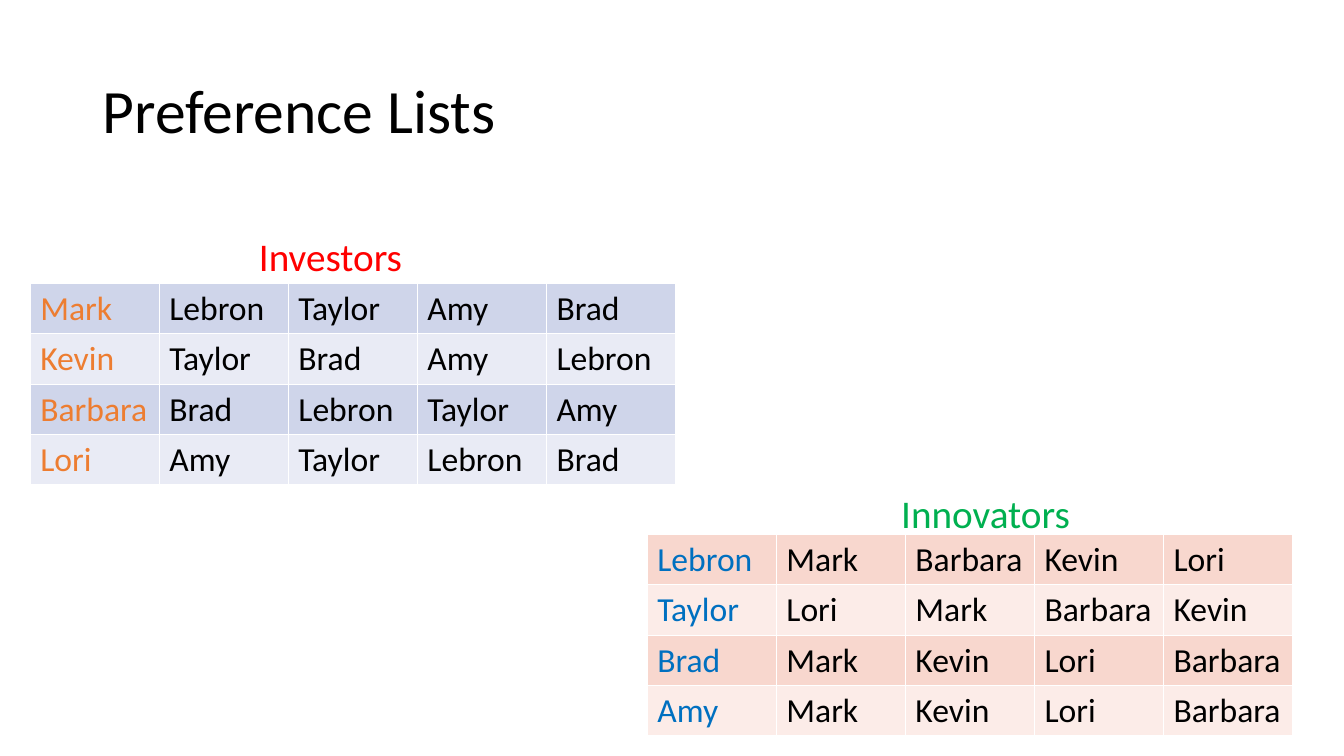
import pptx
import pptx.dml.color
import pptx.enum.text
import pptx.oxml
import pptx.oxml.ns
import pptx.util
from pptx.util import Inches

# Content
FONT = "Calibri"
TITLE = "Preference Lists"
GROUPS = [
    {
        "label": "Investors", "label_color": "FF0000", "label_box": (2.47, 2.26, 1.78, 0.88),
        "table_at": (0.3, 2.81), "name_color": "ED7D31", "bands": ("CFD5EA", "E9EBF5"),
        "preferences": [
            ("Mark", "Lebron", "Taylor", "Amy", "Brad"),
            ("Kevin", "Taylor", "Brad", "Amy", "Lebron"),
            ("Barbara", "Brad", "Lebron", "Taylor", "Amy"),
            ("Lori", "Amy", "Taylor", "Lebron", "Brad"),
        ],
    },
    {
        "label": "Innovators", "label_color": "00B050", "label_box": (8.84, 4.81, 1.89, 0.57),
        "table_at": (6.42, 5.3), "name_color": "0070C0", "bands": ("F8D7CE", "FCECE8"),
        "preferences": [
            ("Lebron", "Mark", "Barbara", "Kevin", "Lori"),
            ("Taylor", "Lori", "Mark", "Barbara", "Kevin"),
            ("Brad", "Mark", "Kevin", "Lori", "Barbara"),
            ("Amy", "Mark", "Kevin", "Lori", "Barbara"),
        ],
    },
]
COLUMN_WIDTH = 1.28
ROW_HEIGHT = 0.5


def rgb(hex_color):
    return pptx.dml.color.RGBColor.from_string(hex_color)


def add_run(paragraph, text, size, color):
    run = paragraph.add_run()
    run.text = text
    run.font.name = FONT
    run.font.size = pptx.util.Pt(size)
    run.font.color.rgb = rgb(color)


def add_text(slide, box, text, size, color):
    frame = slide.shapes.add_textbox(*map(Inches, box)).text_frame
    frame.word_wrap = True
    add_run(frame.paragraphs[0], text, size, color)
    return frame


def add_borders(cell, color="FFFFFF"):
    properties = cell._tc.get_or_add_tcPr()
    for position, side in enumerate(("lnL", "lnR", "lnT", "lnB")):
        border = pptx.oxml.parse_xml(
            f'<a:{side} {pptx.oxml.ns.nsdecls("a")} w="12700"><a:solidFill>'
            f'<a:srgbClr val="{color}"/></a:solidFill></a:{side}>')
        properties.insert(position, border)


def add_preferences(slide, group):
    rows = group["preferences"]
    columns = len(rows[0])
    left, top = group["table_at"]
    table = slide.shapes.add_table(
        len(rows), columns, Inches(left), Inches(top),
        Inches(columns * COLUMN_WIDTH), Inches(len(rows) * ROW_HEIGHT)).table
    table.first_row = False
    for r, names in enumerate(rows):
        for c, name in enumerate(names):
            cell = table.cell(r, c)
            cell.fill.solid()
            cell.fill.fore_color.rgb = rgb(group["bands"][r % 2])
            add_borders(cell)
            color = group["name_color"] if c == 0 else "000000"
            add_run(cell.text_frame.paragraphs[0], name, 24, color)


def main():
    deck = pptx.Presentation()
    deck.slide_width, deck.slide_height = Inches(13.33), Inches(7.5)
    slide = deck.slides.add_slide(deck.slide_layouts[6])

    # Title
    title = add_text(slide, (0.92, 0.4, 11.5, 1.45), TITLE, 44, "000000")
    title.vertical_anchor = pptx.enum.text.MSO_ANCHOR.MIDDLE
    title.paragraphs[0].line_spacing = 0.9

    # Preference tables with their labels
    for group in GROUPS:
        add_preferences(slide, group)
        add_text(slide, group["label_box"], group["label"], 28, group["label_color"])

    deck.save("out.pptx")


if __name__ == "__main__":
    main()
